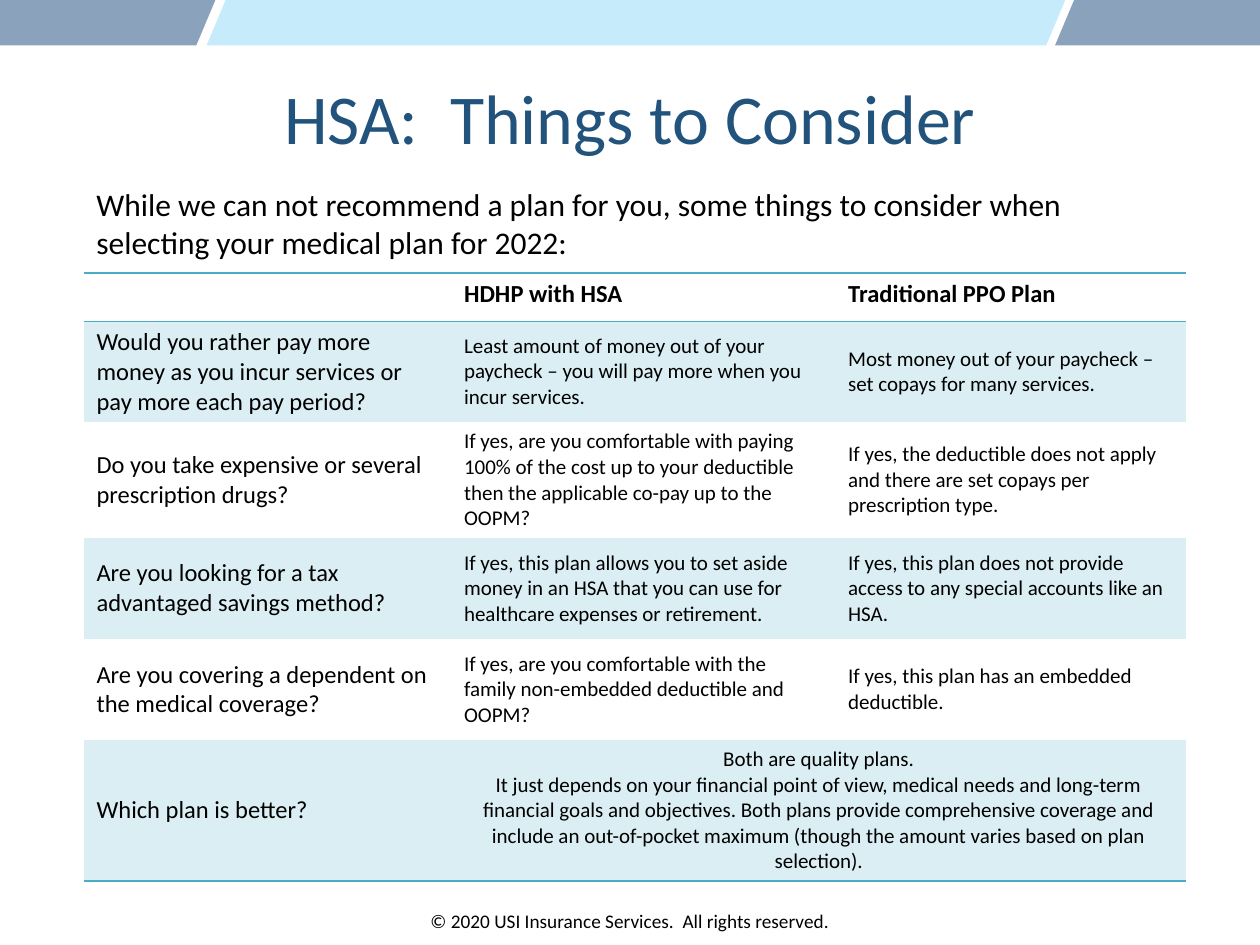
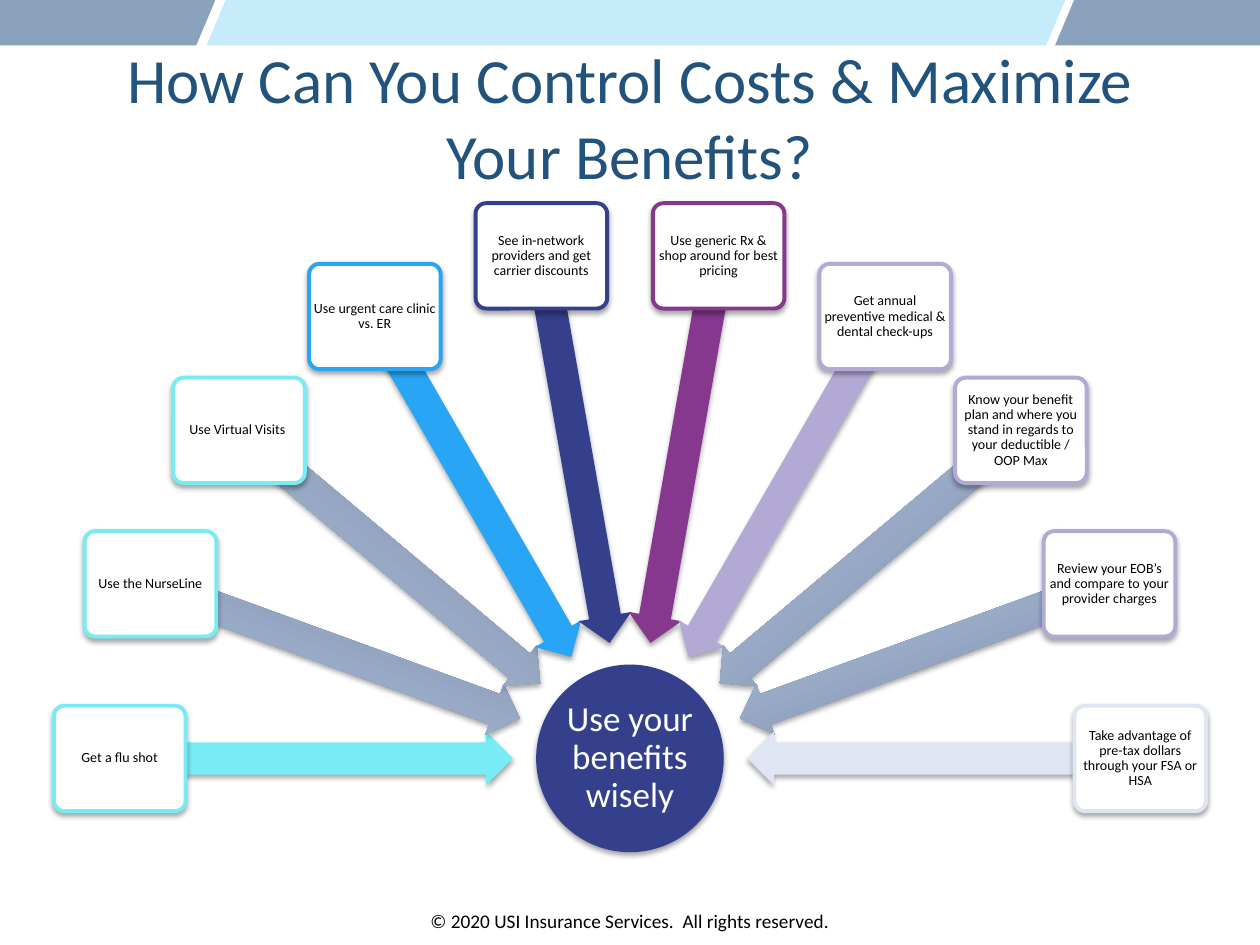
import math
import pptx
import pptx.util
import pptx.dml.color
import pptx.enum.shapes
import pptx.enum.text
import pptx.oxml
import pptx.oxml.ns

Pt = pptx.util.Pt
Kind = pptx.enum.shapes.MSO_SHAPE
Align = pptx.enum.text.PP_ALIGN
Anchor = pptx.enum.text.MSO_ANCHOR
qn = pptx.oxml.ns.qn
SPACE = pptx.oxml.ns.nsdecls("a")


class Theme:
    font = "Calibri"
    black, white = "000000", "FFFFFF"
    title, steel, sky = "22537C", "16467A", "8ED8F8"
    teal, tint = "4BACC6", "DBEEF4"
    aqua, blue, navy = "78ECF5", "29A5F5", "35408C"
    plum, lilac, mist = "86388E", "B2A9D5", "DFE5F3"
    fade = ("7D8CA2", "A5B8D7")
    lead, head, cell, foot, hub, tip = 18, 14, 12, 11, 20, 8


FOOTER = "© 2020 USI Insurance Services.  All rights reserved."
BANDS = [(118.1, Theme.sky), (-365.8, Theme.steel), (599.8, Theme.steel)]
CUTS = [(108, 41.8), (594, 41)]

PLAN_TITLE = "HSA:  Things to Consider"
LEAD = ("While we can not recommend a plan for you, some things to consider "
        "when selecting your medical plan for 2022:")
PLANS = [
    ("", "HDHP with HSA", "Traditional PPO Plan"),
    ("Would you rather pay more money as you incur services or pay more each pay period?",
     "Least amount of money out of your paycheck – you will pay more when you incur services.",
     "Most money out of your paycheck – set copays for many services."),
    ("Do you take expensive or several prescription drugs?",
     "If yes, are you comfortable with paying 100% of the cost up to your deductible "
     "then the applicable co-pay up to the OOPM?",
     "If yes, the deductible does not apply and there are set copays per prescription type."),
    ("Are you looking for a tax advantaged savings method?",
     "If yes, this plan allows you to set aside money in an HSA that you can use for "
     "healthcare expenses or retirement.",
     "If yes, this plan does not provide access to any special accounts like an HSA."),
    ("Are you covering a dependent on the medical coverage?",
     "If yes, are you comfortable with the family non-embedded deductible and OOPM?",
     "If yes, this plan has an embedded deductible."),
    ("Which plan is better?",
     "Both are quality plans.\nIt just depends on your financial point of view, medical needs "
     "and long-term financial goals and objectives. Both plans provide comprehensive coverage "
     "and include an out-of-pocket maximum (though the amount varies based on plan selection).",
     ""),
]
WIDTHS = (210, 219.5, 200.3)
HEIGHTS = (27.6, 57.8, 66, 57.8, 57.8, 80.4)

TIPS_TITLE = "How Can You Control Costs & Maximize Your Benefits?"
HUB = "Use your benefits wisely"
TIPS = [
    ("Get a flu shot", Theme.aqua, Theme.aqua),
    ("Use the NurseLine", Theme.aqua, Theme.fade),
    ("Use Virtual Visits ", Theme.aqua, Theme.fade),
    ("Use urgent care clinic vs. ER", Theme.blue, Theme.blue),
    ("See in-network providers and get carrier discounts", Theme.navy, Theme.navy),
    ("Use generic Rx & shop around for best pricing", Theme.plum, Theme.plum),
    ("Get annual preventive medical & dental check-ups", Theme.lilac, Theme.lilac),
    ("Know your benefit plan and where you stand in regards to your deductible / OOP Max",
     Theme.lilac, Theme.fade),
    ("Review your EOB’s and compare to your provider charges", Theme.lilac, Theme.fade),
    ("Take advantage of pre-tax dollars through your FSA or HSA", Theme.mist, Theme.mist),
]


def rgb(code):
    return pptx.dml.color.RGBColor.from_string(code)


def paint(fill, tone):
    if isinstance(tone, str):
        fill.solid()
        fill.fore_color.rgb = rgb(tone)
        return
    fill.gradient()
    fill.gradient_angle = 90
    for stop, code, place in zip(fill.gradient_stops, tone, (0, 0.8)):
        stop.color.rgb = rgb(code)
        stop.position = place


def write(frame, text, size, tone=Theme.black, align=Align.LEFT, bold=False, space=None):
    frame.text = text
    for para in frame.paragraphs:
        para.alignment = align
        para.font.size = Pt(size)
        if not para.runs:
            para._p.get_or_add_endParaRPr().set("sz", str(size * 100))
        if space:
            para.line_spacing = space
        for run in para.runs:
            run.font.name = Theme.font
            run.font.size = Pt(size)
            run.font.bold = bold
            run.font.color.rgb = rgb(tone)


def add_text(slide, box, text, size, align=Align.LEFT):
    frame = slide.shapes.add_textbox(*map(Pt, box)).text_frame
    frame.word_wrap = True
    write(frame, text, size, align=align)


def add_bands(slide, top=-11.5, width=496.8, height=37.4, slant=15.7):
    for left, tone in BANDS:
        right, base = left + width, top + height
        path = slide.shapes.build_freeform(Pt(left + slant), Pt(top))
        path.add_line_segments([(Pt(right), Pt(top)), (Pt(right - slant), Pt(base)),
                                (Pt(left), Pt(base))])
        band = path.convert_to_shape()
        band.shadow.inherit = False
        paint(band.fill, tone)
        band.element.spPr.find(".//" + qn("a:srgbClr")).append(
            pptx.oxml.parse_xml(f'<a:alpha {SPACE} val="50000"/>'))
        band.line.fill.background()
    for x, y in CUTS:
        line = slide.shapes.add_connector(
            pptx.enum.shapes.MSO_CONNECTOR.STRAIGHT, *map(Pt, (x, y, x + 28.8, y - 68.4)))
        line.line.color.rgb = rgb(Theme.white)
        line.line.width = Pt(4.5)
        line.element.spPr.append(pptx.oxml.parse_xml(f"<a:effectLst {SPACE}/>"))


def add_slide(deck, title, size):
    slide = deck.slides.add_slide(deck.slide_layouts[5])
    add_bands(slide)
    add_text(slide, (36, 516, 648, 24), FOOTER, Theme.foot, Align.CENTER)
    head = slide.shapes.title
    head.left, head.top, head.width, head.height = map(Pt, (48, 21.6, 624, 90))
    frame = head.text_frame
    frame.auto_size = pptx.enum.text.MSO_AUTO_SIZE.NONE
    frame.vertical_anchor = Anchor.MIDDLE
    write(frame, title, size, Theme.title, Align.CENTER)
    return slide


def add_rule(cell, side):
    cell._tc.get_or_add_tcPr().append(pptx.oxml.parse_xml(
        f'<a:{side} {SPACE} w="{Pt(1)}"><a:solidFill>'
        f'<a:srgbClr val="{Theme.teal}"/></a:solidFill></a:{side}>'))


def add_plans(slide):
    last = len(PLANS) - 1
    frame = slide.shapes.add_table(len(PLANS), len(WIDTHS), Pt(48), Pt(156),
                                   Pt(sum(WIDTHS)), Pt(sum(HEIGHTS)))
    table = frame.table
    table.first_row = table.horz_banding = False
    style = frame.element.find(".//" + qn("a:tableStyleId"))
    style.text = "{2D5ABB26-0587-4C30-8999-92F81FD0307C}"
    for col, width in zip(table.columns, WIDTHS):
        col.width = Pt(width)
    for row, height in zip(table.rows, HEIGHTS):
        row.height = Pt(height)
    table.cell(last, 1).merge(table.cell(last, 2))
    for i, texts in enumerate(PLANS):
        for j, text in enumerate(texts):
            cell = table.cell(i, j)
            if i == 0:
                add_rule(cell, "lnT")
            if i in (0, last):
                add_rule(cell, "lnB")
            if i % 2:
                paint(cell.fill, Theme.tint)
            else:
                cell.fill.background()
            cell.vertical_anchor = Anchor.MIDDLE if i else Anchor.TOP
            write(cell.text_frame, text, Theme.cell if i and j else Theme.head,
                  align=Align.CENTER if i == last and j else Align.LEFT, bold=i == 0)
    for j in range(len(WIDTHS)):
        paint(table.cell(last, j).fill, Theme.tint)


def add_node(slide, kind, mid, size, tone, edge=None):
    left, top = (m - s / 2 for m, s in zip(mid, size))
    node = slide.shapes.add_shape(kind, *map(Pt, (left, top, *size)))
    paint(node.fill, tone)
    if edge:
        node.line.color.rgb = rgb(edge)
        node.line.width = Pt(2.25)
    else:
        node.line.fill.background()
    node.shadow.inherit = False
    node.element.find(".//" + qn("a:effectLst")).append(pptx.oxml.parse_xml(
        f'<a:outerShdw {SPACE} blurRad="{Pt(3.1)}" dist="{Pt(1.8)}" '
        'dir="5400000" rotWithShape="0"><a:srgbClr val="000000"><a:alpha val="35000"/>'
        '</a:srgbClr></a:outerShdw>'))
    return node


def label(node, text, size, tone, inset):
    frame = node.text_frame
    frame.word_wrap = True
    frame.vertical_anchor = Anchor.MIDDLE
    frame.margin_left = frame.margin_right = Pt(inset)
    frame.margin_top = frame.margin_bottom = Pt(inset)
    write(frame, text, size, tone, Align.CENTER, space=0.9)


def add_fan(slide, hub=(360, 433.4), near=179.3, far=291.6):
    disc = add_node(slide, Kind.OVAL, hub, (107.2, 107.2), Theme.navy)
    label(disc, HUB, Theme.hub, Theme.white, 0.9)
    step = 180 / (len(TIPS) - 1)
    for i, (text, edge, tone) in enumerate(TIPS):
        turn = 180 + i * step
        cos, sin = math.cos(math.radians(turn)), math.sin(math.radians(turn))
        spots = [(hub[0] + r * cos, hub[1] + r * sin) for r in (near, far)]
        arrow = add_node(slide, Kind.LEFT_ARROW, spots[0], (224.6, 30.6), tone)
        arrow.adjustments[0], arrow.adjustments[1] = 0.6, 0.5
        arrow.rotation = turn % 360
        card = add_node(slide, Kind.ROUNDED_RECTANGLE, spots[1], (75.2, 60.2), Theme.white, edge)
        card.adjustments[0] = 0.1
        label(card, text, Theme.tip, Theme.black, 0.6)


def main():
    deck = pptx.Presentation()
    deck.slide_width, deck.slide_height = Pt(720), Pt(540)
    slide = add_slide(deck, PLAN_TITLE, 40)
    add_text(slide, (48, 102.2, 624, 52), LEAD, Theme.lead)
    add_plans(slide)
    add_fan(add_slide(deck, TIPS_TITLE, 36))
    deck.save("out.pptx")


if __name__ == "__main__":
    main()
